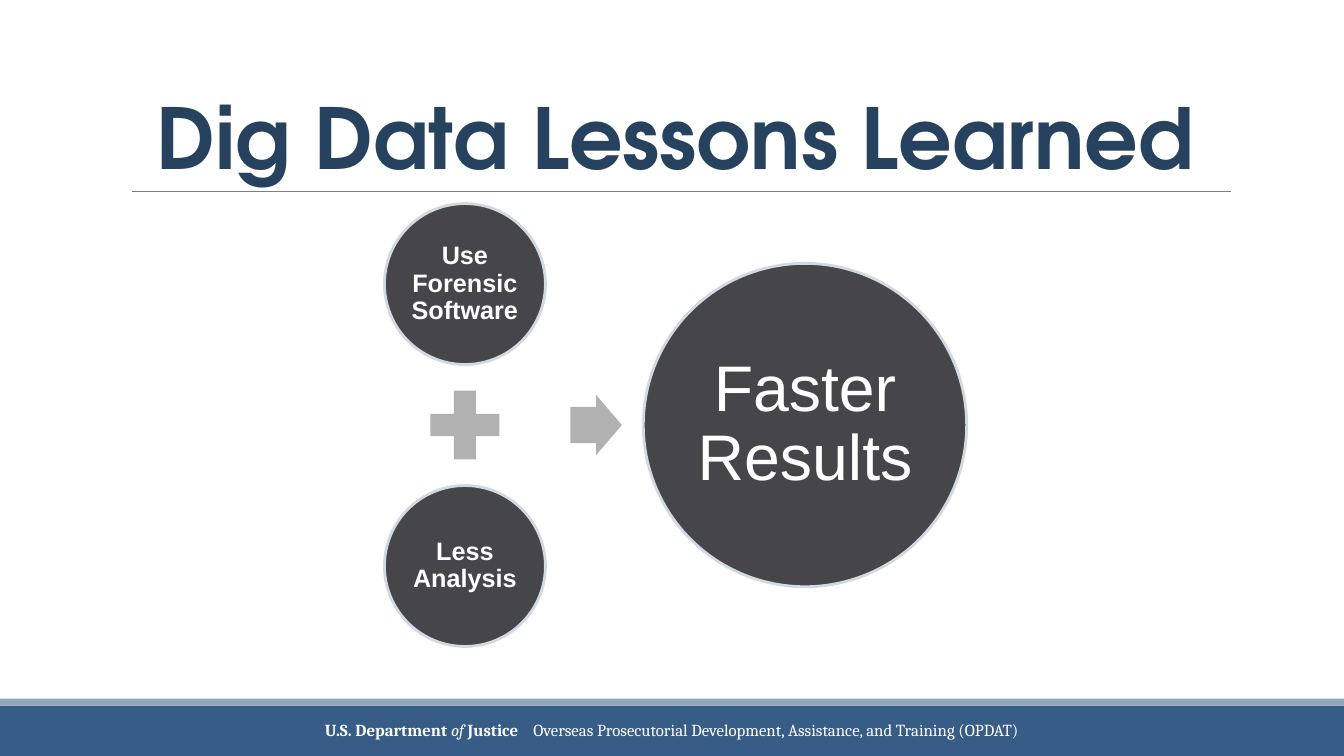
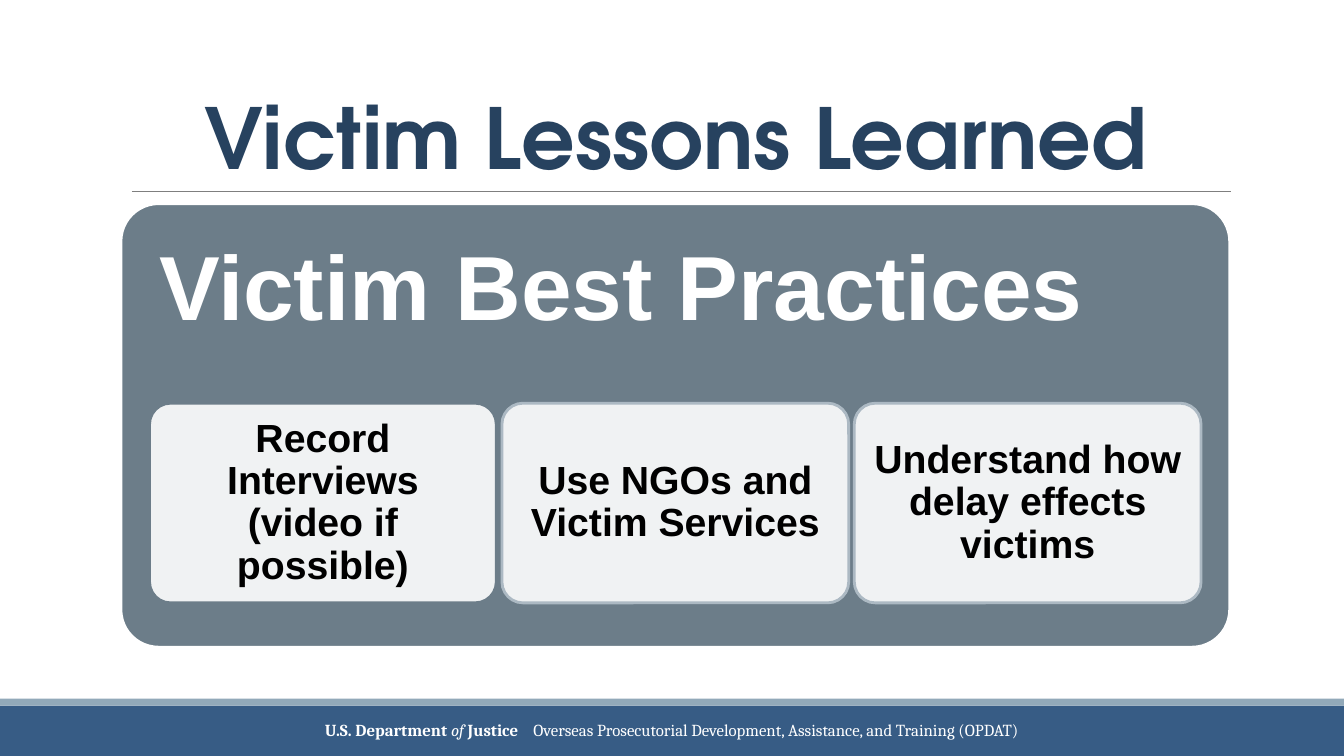
import pptx
import pptx.util
import pptx.dml.color
import pptx.enum.shapes
import pptx.enum.text
import pptx.oxml.ns
import lxml.etree

Pt = pptx.util.Pt
RGB = pptx.dml.color.RGBColor
KIND = pptx.enum.shapes.MSO_SHAPE
ALIGN = pptx.enum.text.PP_ALIGN
ANCHOR = pptx.enum.text.MSO_ANCHOR
qn = pptx.oxml.ns.qn

# Colours and fonts
WHITE = RGB(0xFF, 0xFF, 0xFF)
BLACK = RGB(0, 0, 0)
NAVY = RGB(0x27, 0x42, 0x5F)
BLUE = RGB(0x37, 0x5C, 0x85)
MIST = RGB(0x92, 0xA9, 0xB9)
RULE = RGB(0x7F, 0x7F, 0x7F)
DARK = RGB(0x46, 0x46, 0x4A)
RING = RGB(0xD1, 0xD9, 0xE1)
GREY = RGB(0xB1, 0xB1, 0xB2)
SLATE = RGB(0x6C, 0x7D, 0x89)
EDGE = RGB(0xAC, 0xB9, 0xC3)
HEAD, BODY, FOOT = "TeX Gyre Adventor", "Arial", "Cambria"

# Content
WIDE, HIGH = 960, 540
FOOTER = [  # text, bold, italic, letter spacing in points
    ("U.S. Department ", True, False, 0),
    ("of", False, True, 0),
    (" Justice", True, False, 0),
    (" ", True, False, 8),
    ("Overseas Prosecutorial Development, Assistance, and Training (OPDAT)",
     False, False, 0),
]
DATA = {
    "title": "Dig Data Lessons Learned",
    "parts": ["Use Forensic Software", "Less Analysis"],
    "sum": "Faster Results",
}
VICTIM = {
    "title": "Victim Lessons Learned",
    "head": "Victim Best Practices",
    "cards": [
        ("Record Interviews (video if possible)", SLATE),
        ("Use NGOs and Victim Services", EDGE),
        ("Understand how delay effects victims", EDGE),
    ],
}


def add_form(slide, kind, box, fill, line=None, adjust=()):
    form = slide.shapes.add_shape(kind, *map(Pt, box))
    form.shadow.inherit = False
    form.fill.solid()
    form.fill.fore_color.rgb = fill
    if line is None:
        form.line.fill.background()
    else:
        form.line.color.rgb = line
        form.line.width = Pt(2)
    for spot, value in enumerate(adjust):
        form.adjustments[spot] = value
    return form


def set_text(form, runs, size, font, color, insets, anchor=ANCHOR.MIDDLE,
             align=ALIGN.CENTER, space=0.9):
    frame = form.text_frame
    frame.word_wrap = True
    frame.vertical_anchor = anchor
    (frame.margin_left, frame.margin_top,
     frame.margin_right, frame.margin_bottom) = map(Pt, insets)
    para = frame.paragraphs[0]
    para.alignment = align
    para.line_spacing = space
    for text, bold, slant, track in runs:
        run = para.add_run()
        run.text = text
        run.font.size = Pt(size)
        run.font.name = font
        run.font.bold = bold
        run.font.italic = slant
        run.font.color.rgb = color
        if track:
            run.font._element.set("spc", str(track * 100))


def plain(text, bold=True):
    return [(text, bold, False, 0)]


def add_base(deck, title):
    """Blank slide with the shared bands, rule, footer and title."""
    slide = deck.slides.add_slide(deck.slide_layouts[6])
    add_form(slide, KIND.RECTANGLE, (0, 504, WIDE, 36), BLUE)
    add_form(slide, KIND.RECTANGLE, (0, 499, WIDE, 5), MIST)
    rule = slide.shapes.add_connector(
        pptx.enum.shapes.MSO_CONNECTOR.STRAIGHT,
        Pt(94.3), Pt(136.8), Pt(879), Pt(136.8))
    rule.line.color.rgb = RULE
    rule.line.width = Pt(0.75)
    lxml.etree.SubElement(rule._element.spPr, qn("a:effectLst"))
    foot = slide.shapes.add_textbox(*map(Pt, (189, 511, 582, 23)))
    set_text(foot, FOOTER, 12, FOOT, WHITE, (5, 3, 5, 3), space=0.8)
    head = slide.shapes.add_textbox(*map(Pt, (86.4, 22.3, 792, 114.5)))
    set_text(head, plain(title), 60, HEAD, NAVY, (7.2, 3.6, 7.2, 3.6),
             ANCHOR.BOTTOM, space=0.85)
    return slide


def add_data(deck):
    slide = add_base(deck, DATA["title"])
    mid, left, right = 303.6, 332.1, 575

    def place(kind, x, y, wide, high, fill, line=None, adjust=()):
        box = (x - wide / 2, y - high / 2, wide, high)
        return add_form(slide, kind, box, fill, line, adjust)

    # Two small discs, one above and one below the plus sign
    for text, side in zip(DATA["parts"], (-1, 1)):
        disc = place(KIND.OVAL, left, mid + side * 100.7, 115, 115, DARK, RING)
        set_text(disc, plain(text), 18, BODY, WHITE, (2,) * 4)
    place(KIND.MATH_PLUS, left, mid, 67, 67, GREY)

    # Arrow to the large disc
    place(KIND.RIGHT_ARROW, 425.8, mid, 36.7, 43, GREY, adjust=(0.6, 0.5))
    disc = place(KIND.OVAL, right, mid, 231, 231, DARK, RING)
    set_text(disc, plain(DATA["sum"], False), 46, BODY, WHITE, (4.3,) * 4)


def add_victim(deck):
    slide = add_base(deck, VICTIM["title"])
    # Panel with its heading
    left, top, wide, high = 86.4, 145.5, 792, 316.8
    panel = add_form(slide, KIND.ROUNDED_RECTANGLE, (left, top, wide, high),
                     SLATE, WHITE, (0.085,))
    set_text(panel, plain(VICTIM["head"]), 65, BODY, WHITE,
             (19.4, 19.4, 19.4, 196), ANCHOR.TOP, ALIGN.LEFT)

    # Row of cards, centred in the panel
    cards, span, gap = VICTIM["cards"], 247.7, 4
    start = left + (wide - len(cards) * (span + gap) + gap) / 2
    for spot, (text, edge) in enumerate(cards):
        box = (start + spot * (span + gap), 288, span, 142.6)
        card = add_form(slide, KIND.ROUNDED_RECTANGLE, box, WHITE, edge,
                        (0.105,))
        tint = card._element.spPr.find(qn("a:solidFill"))[0]
        lxml.etree.SubElement(tint, qn("a:alpha"), val="90000")
        set_text(card, plain(text), 28, BODY, BLACK, (8.4,) * 4)


def main():
    deck = pptx.Presentation()
    deck.slide_width, deck.slide_height = Pt(WIDE), Pt(HIGH)
    add_data(deck)
    add_victim(deck)
    deck.save("out.pptx")


if __name__ == "__main__":
    main()
